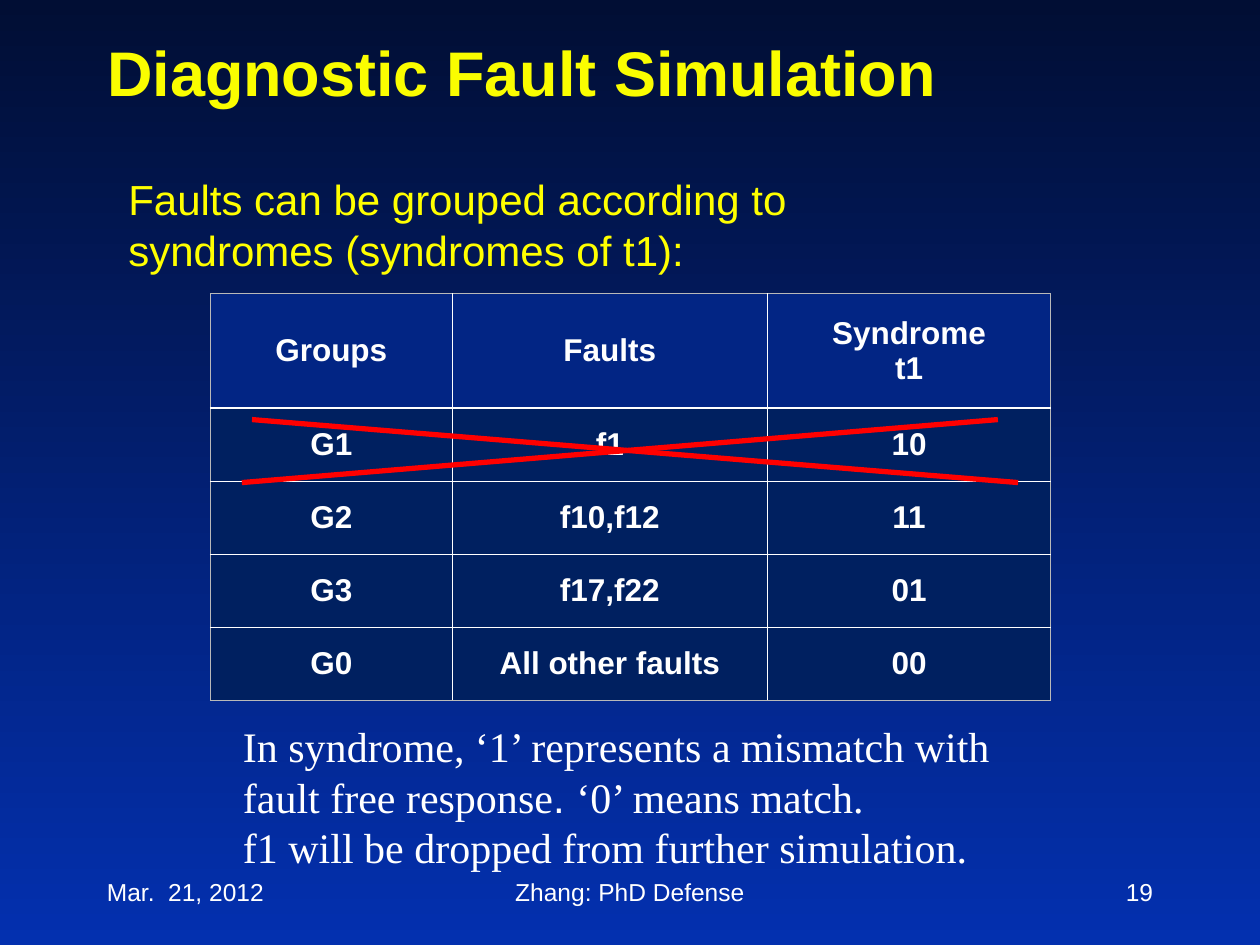
from lxml.etree import SubElement
from pptx import Presentation
from pptx.dml.color import RGBColor
from pptx.enum.shapes import MSO_CONNECTOR
from pptx.enum.text import MSO_ANCHOR, PP_ALIGN
from pptx.oxml.ns import qn
from pptx.util import Inches, Pt

COLORS = {
    "top": "010E34", "base": "0330AF", "title": "FAFD00", "lead": "FFFF00",
    "text": "FFFFFF", "head": "022584", "body": "002060", "edge": "B9B9B9",
    "cross": "FF0000",
}
SANS, SERIF = "Arial", "Times New Roman"
ROWS = [
    ["Groups", "Faults", "Syndrome\nt1"],
    ["G1", "f1", "10"],
    ["G2", "f10,f12", "11"],
    ["G3", "f17,f22", "01"],
    ["G0", "All other faults", "00"],
]
WIDTHS = [1.92, 2.5, 2.25]
HEIGHTS = [0.91] + [0.58] * 4


def rgb(name):
    return RGBColor.from_string(COLORS[name])


def write(frame, text, size=24, font=SANS, color="text", bold=False,
          align=PP_ALIGN.LEFT, anchor=MSO_ANCHOR.TOP, wrap=True):
    frame.word_wrap = wrap
    frame.vertical_anchor = anchor
    lines = text.split("\n") if isinstance(text, str) else text
    for i, line in enumerate(lines):
        para = frame.paragraphs[0] if i == 0 else frame.add_paragraph()
        para.alignment = align
        parts = [(line, font)] if isinstance(line, str) else line
        for words, face in parts:
            run = para.add_run()
            run.text = words
            run.font.size = Pt(size)
            run.font.name = face
            run.font.bold = bold
            run.font.color.rgb = rgb(color)


def label(slide, box, text, **style):
    shape = slide.shapes.add_textbox(*map(Inches, box))
    write(shape.text_frame, text, **style)


def paint(slide):
    fill = slide.background.fill
    fill.gradient()
    fill.gradient_angle = 270
    for stop, name, spot in zip(fill.gradient_stops, ("top", "base"), (0, 1)):
        stop.color.rgb = rgb(name)
        stop.position = spot


def title(slide, box):
    shape = slide.shapes.title
    shape.left, shape.top, shape.width, shape.height = map(Inches, box)
    write(shape.text_frame, "Diagnostic Fault Simulation", size=36,
          color="title", bold=True, anchor=MSO_ANCHOR.BOTTOM)


def border(cell, side, outer):
    line = SubElement(cell._tc.get_or_add_tcPr(), qn("a:ln" + side),
                      w=str(Pt(0.75 if outer else 1)))
    fill = SubElement(line, qn("a:solidFill"))
    SubElement(fill, qn("a:srgbClr"), val=COLORS["edge" if outer else "text"])


def groups(slide, box):
    table = slide.shapes.add_table(len(ROWS), len(WIDTHS),
                                   *map(Inches, box)).table
    for col, width in zip(table.columns, WIDTHS):
        col.width = Inches(width)
    for row, height in zip(table.rows, HEIGHTS):
        row.height = Inches(height)
    for r, row in enumerate(ROWS):
        for c, text in enumerate(row):
            cell = table.cell(r, c)
            cell.margin_left = cell.margin_right = Inches(0.07)
            cell.margin_top = cell.margin_bottom = 0
            write(cell.text_frame, text, size=18, bold=True,
                  align=PP_ALIGN.CENTER)
            cell.vertical_anchor = MSO_ANCHOR.MIDDLE
            border(cell, "L", c == 0)
            border(cell, "R", c == len(WIDTHS) - 1)
            border(cell, "T", r == 0)
            border(cell, "B", r == len(ROWS) - 1)
            cell.fill.solid()
            cell.fill.fore_color.rgb = rgb("body" if r else "head")


def cross(slide, box):
    left, top, width, height = box
    low = top + height
    ends = [(left + 0.08, top, left + width, low),
            (left, low, left + width - 0.16, top)]
    for end in ends:
        line = slide.shapes.add_connector(MSO_CONNECTOR.STRAIGHT,
                                          *map(Inches, end))
        line.line.color.rgb = rgb("cross")
        line.line.width = Pt(3)
        SubElement(line._element.spPr, qn("a:effectLst"))


def footer(slide, box):
    left, top, width, height = box
    side, mid = 2.08, 3.17
    items = [
        (left, side, "Mar.  21, 2012", PP_ALIGN.LEFT),
        (left + (width - mid) / 2, mid, "Zhang: PhD Defense", PP_ALIGN.CENTER),
        (left + width - side, side, "19", PP_ALIGN.RIGHT),
    ]
    for x, span, text, align in items:
        label(slide, (x, top, span, height), text, size=14, align=align,
              anchor=MSO_ANCHOR.MIDDLE, wrap=False)


def main():
    deck = Presentation()
    deck.slide_width, deck.slide_height = Inches(10), Inches(7.5)
    slide = deck.slides.add_slide(deck.slide_layouts[5])
    paint(slide)
    title(slide, (0.75, 0.25, 8.5, 0.67))
    label(slide, (1.83, 5.67, 6.25, 1.31), [
        [("In syndrome, ‘1’ represents a mismatch with fault free response",
          SERIF), (". ", SANS), ("‘0’ means match.", SERIF)],
        "f1 will be dropped from further simulation.",
    ], font=SERIF)
    label(slide, (0.92, 1.33, 6.5, 0.91),
          "Faults can be grouped according to syndromes (syndromes of t1):",
          color="lead")
    groups(slide, (1.67, 2.33, 6.67, 3.25))
    cross(slide, (1.92, 3.33, 6.16, 0.5))
    footer(slide, (0.75, 6.83, 8.5, 0.5))
    deck.save("out.pptx")


if __name__ == "__main__":
    main()
